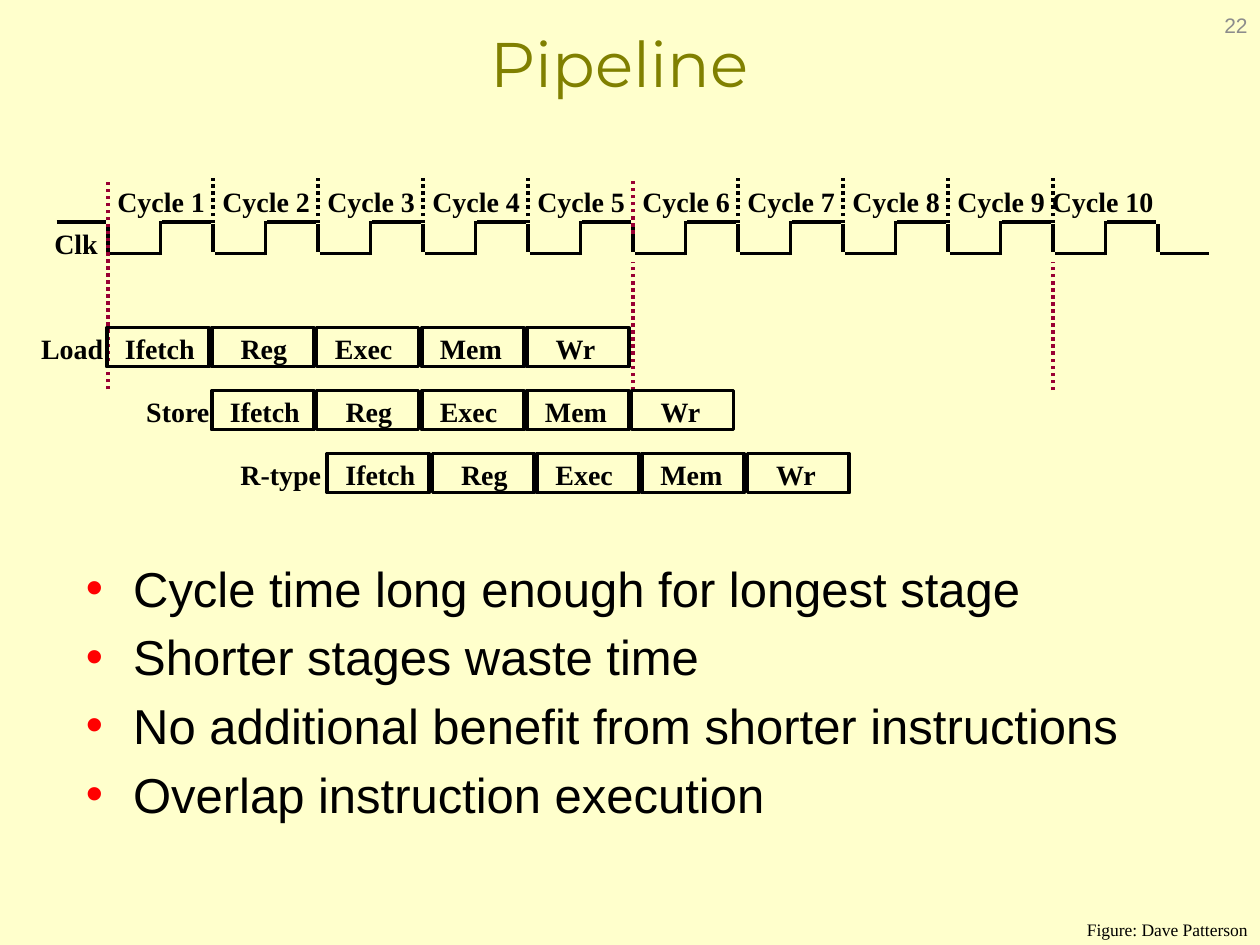
"""Build a slide on pipelined instruction timing over ten clock cycles."""
from dataclasses import dataclass

from lxml.etree import SubElement
from pptx import Presentation
from pptx.dml.color import RGBColor
from pptx.enum.dml import MSO_LINE
from pptx.enum.shapes import MSO_CONNECTOR, MSO_SHAPE
from pptx.enum.text import MSO_ANCHOR, MSO_AUTO_SIZE, PP_ALIGN
from pptx.oxml.ns import qn
from pptx.util import Pt


@dataclass(frozen=True)
class Theme:
    back: str = "FFFFCC"
    ink: str = "000000"
    title: str = "808000"
    mark: str = "990033"
    dot: str = "FF0000"
    gray: str = "8C8C8C"
    head: str = "Montserrat"
    sans: str = "Arial"
    serif: str = "Times New Roman"
    big: int = 36
    body: int = 28
    label: int = 16
    page: int = 12
    note: int = 10
    line: int = 2


theme = Theme()


def write(shape, text, font, size, color, bold=False, align=PP_ALIGN.LEFT):
    frame = shape.text_frame
    frame.text = text
    for para in frame.paragraphs:
        para.alignment = align
        for run in para.runs:
            run.font.name = font
            run.font.size = Pt(size)
            run.font.bold = bold
            run.font.color.rgb = RGBColor.from_string(color)
    return frame


def draw(x1, y1, x2, y2, color=theme.ink, dots=False):
    line = slide.shapes.add_connector(MSO_CONNECTOR.STRAIGHT, Pt(x1), Pt(y1), Pt(x2), Pt(y2))
    line.line.color.rgb = RGBColor.from_string(color)
    line.line.width = Pt(theme.line)
    if dots:
        line.line.dash_style = MSO_LINE.ROUND_DOT
    SubElement(line._element.spPr, qn("a:effectLst"))


deck = Presentation()
deck.slide_width, deck.slide_height = Pt(720), Pt(540)
slide = deck.slides.add_slide(deck.slide_layouts[5])
slide.background.fill.solid()
slide.background.fill.fore_color.rgb = RGBColor.from_string(theme.back)

title = slide.shapes.title
title.left, title.top, title.width, title.height = Pt(42), Pt(12), Pt(624), Pt(55)
frame = write(title, "Pipeline", theme.head, theme.big, theme.title, align=PP_ALIGN.CENTER)
frame.margin_left = frame.margin_right = Pt(5)
frame.margin_top = frame.margin_bottom = Pt(2)
frame.vertical_anchor = MSO_ANCHOR.TOP

note = slide.shapes.add_textbox(Pt(613.5), Pt(527.8), Pt(106.5), Pt(12.2))
frame = write(note, "Figure: Dave Patterson", theme.serif, theme.note, theme.ink, align=PP_ALIGN.RIGHT)
frame.word_wrap = False
frame.auto_size = MSO_AUTO_SIZE.SHAPE_TO_FIT_TEXT
frame.paragraphs[0].line_spacing = 0.4

points = [
    "Cycle time long enough for longest stage",
    "Shorter stages waste time",
    "No additional benefit from shorter instructions",
    "Overlap instruction execution",
]
body = slide.shapes.add_textbox(Pt(42), Pt(315.5), Pt(624), Pt(201))
frame = write(body, "\n".join(points), theme.sans, theme.body, theme.ink)
frame.word_wrap = True
for para in frame.paragraphs:
    para.space_before = Pt(5.6)
    para.font.size = Pt(theme.body)
    props = para._p.get_or_add_pPr()
    props.set("marL", str(Pt(27)))
    props.set("indent", str(Pt(-27)))
    tint = SubElement(props, qn("a:buClr"))
    SubElement(tint, qn("a:srgbClr"), val=theme.dot)
    SubElement(props, qn("a:buFont"), typeface=theme.sans)
    SubElement(props, qn("a:buChar"), char="•")
    props.append(props.find(qn("a:defRPr")))

start, step, count = 61.8, 60, 10
high, low = 126.8, 144.8
draw(start - 29.5, high, start - 1, high)
for i in range(count + 1):
    edge = start + i * step
    draw(edge, 128, edge, 144)
    draw(edge + 1, low, edge + 29, low)
    if i < count:
        draw(edge + 30, 146, edge + 30, 126)
        draw(edge + 31, high, edge + 59, high)
    if i in (1, 2, 3, 4, 6, 7, 8, 9):
        draw(edge, 127.5, edge, 101.5, dots=True)

for edge, top, base in [(5, 150, 223), (9, 150, 223), (5, 102.5, 133.5), (0, 102.5, 222.5)]:
    x = start + edge * step
    draw(x, base, x, top, theme.mark, dots=True)

tags = [(slide.shapes, f"Cycle {i + 1}", 60 + i * step, 102, 64.8) for i in range(count - 1)]
tags += [(slide.shapes, "Cycle 10", 594, 102, 72.8), (slide.shapes, "Clk", 24, 126, 38.9)]

stages = [("Ifetch", 3.3, 54), ("Reg", 9.4, 41), ("Exec", 3.3, 46.8), ("Mem", 3.3, 49.7), ("Wr", 9.4, 37.4)]
rows = [("Load", 16.4, 49.7, 61), ("Store", 76.5, 50.4, 121), ("R-type", 130.3, 60.5, 187)]
for i, (name, x, width, left) in enumerate(rows):
    top = 187.2 + i * 36
    tags.append((slide.shapes, name, x, top - 1.4, width))
    group = slide.shapes.add_group_shape()
    for j, (stage, shift, span) in enumerate(stages):
        cell = left + j * step
        box = group.shapes.add_shape(MSO_SHAPE.RECTANGLE, Pt(cell), Pt(top), Pt(58.3), Pt(22.3))
        box.shadow.inherit = False
        box.fill.background()
        box.line.color.rgb = RGBColor.from_string(theme.ink)
        box.line.width = Pt(theme.line)
        tags.append((group.shapes, stage, cell + shift, top - 1.4, span))

for home, text, x, y, width in tags:
    tag = home.add_textbox(Pt(x), Pt(y), Pt(width), Pt(25.8))
    frame = write(tag, text, theme.serif, theme.label, theme.ink, bold=True)
    frame.margin_right = Pt(2)
    frame.word_wrap = False
    frame.auto_size = MSO_AUTO_SIZE.SHAPE_TO_FIT_TEXT

page = slide.shapes.add_textbox(Pt(552), Pt(0), Pt(168), Pt(28.8))
frame = write(page, "22", theme.sans, theme.page, theme.gray, align=PP_ALIGN.RIGHT)
frame.word_wrap = True
frame.vertical_anchor = MSO_ANCHOR.MIDDLE

deck.save("out.pptx")
